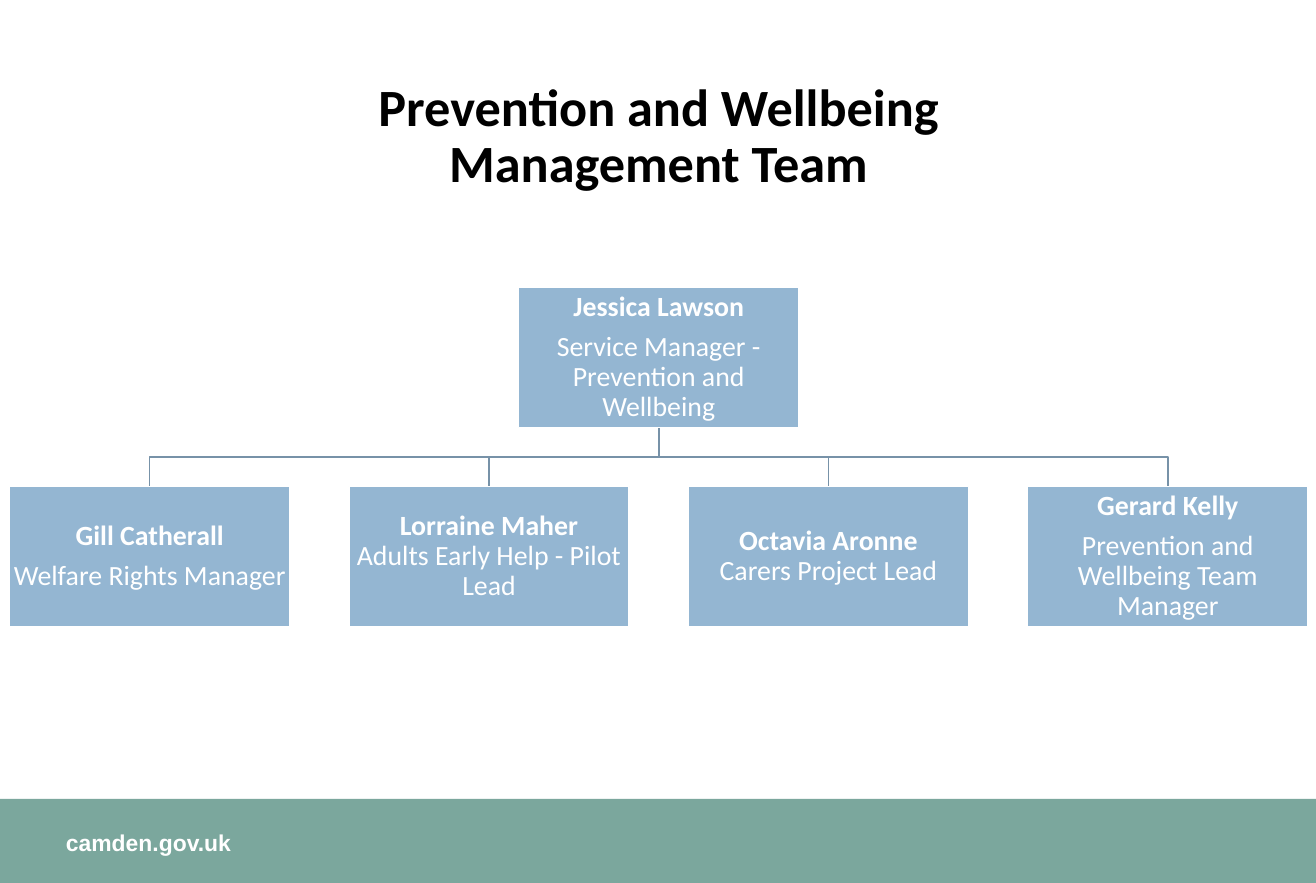
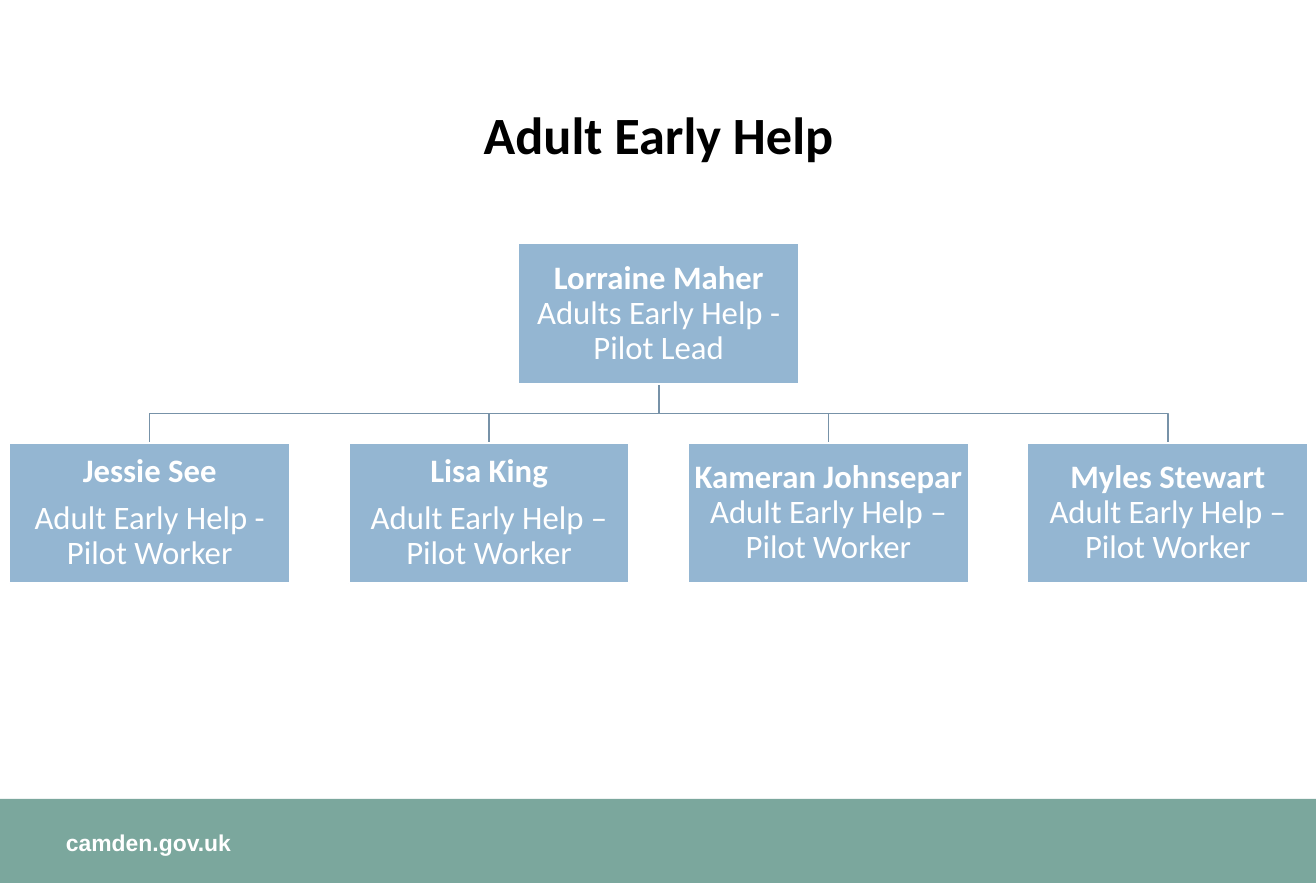
import pptx
import pptx.util
import pptx.dml.color
import pptx.enum.shapes
import pptx.enum.text

Pt = pptx.util.Pt
RGBColor = pptx.dml.color.RGBColor
PP_ALIGN = pptx.enum.text.PP_ALIGN
MIDDLE = pptx.enum.text.MSO_ANCHOR.MIDDLE
RECT = pptx.enum.shapes.MSO_SHAPE.RECTANGLE

WHITE = RGBColor(0xFF, 0xFF, 0xFF)
BLACK = RGBColor(0, 0, 0)
GREEN = RGBColor(0x7B, 0xA7, 0x9D)
BLUE = RGBColor(0x94, 0xB6, 0xD2)
STEEL = RGBColor(0x77, 0x92, 0xA8)

WIDTH, HEIGHT = 805, 540
BAND_TOP = 488.6
BOX_W, BOX_H = 171.6, 85.8
LEFT, PITCH = 5.8, 207.6
DROP = 36

# Each person: name, role, shift of the name to the left, role in its own paragraph
CHARTS = [
    ("Prevention and Wellbeing\vManagement Team", 175.7, 17, 6,
     ("Jessica Lawson", "Service Manager - Prevention and Wellbeing", 0, True),
     [("Gill Catherall", "Welfare Rights Manager", 0, True),
      ("Lorraine Maher", "Adults Early Help - Pilot Lead", 10, False),
      ("Octavia Aronne", "Carers Project Lead", 13.5, False),
      ("Gerard Kelly", "Prevention and Wellbeing Team Manager", 0, True)]),
    ("Adult Early Help", 149, 20, 7,
     ("Lorraine Maher", "Adults Early Help - Pilot Lead", 9.5, False),
     [("Jessie See", "Adult Early Help - Pilot Worker", 2.5, True),
      ("Lisa King", "Adult Early Help – Pilot Worker", 4.5, True),
      ("Kameran Johnsepar", "Adult Early Help – Pilot Worker", 0, False),
      ("Myles Stewart", "Adult Early Help – Pilot Worker", 18.5, False)]),
]


def add_run(p, text, size, color, bold=True, font="Calibri"):
    r = p.add_run()
    r.text = text
    r.font.name = font
    r.font.size = Pt(size)
    r.font.bold = bold
    r.font.color.rgb = color


def add_person(s, person, x, y, size, gap):
    name, role, shift, separate = person
    sp = s.shapes.add_shape(RECT, Pt(x), Pt(y), Pt(BOX_W), Pt(BOX_H))
    sp.shadow.inherit = False
    sp.fill.solid()
    sp.fill.fore_color.rgb = BLUE
    sp.line.color.rgb = WHITE
    sp.line.width = Pt(1)
    tf = sp.text_frame
    tf.word_wrap = True
    tf.vertical_anchor = MIDDLE
    tf.margin_left = tf.margin_right = tf.margin_top = tf.margin_bottom = Pt(0.8)
    p = tf.paragraphs[0]
    if shift:
        # A hanging first line moves centred text by half the indent
        p._p.get_or_add_pPr().set("marL", "0")
        p._p.get_or_add_pPr().set("indent", str(-Pt(2 * shift)))
    add_run(p, name, size, WHITE)
    if separate:
        p.space_after = Pt(gap)
        p = tf.add_paragraph()
    else:
        p.add_line_break()
    add_run(p, role, size, WHITE, bold=False)
    for p in tf.paragraphs:
        p.alignment = PP_ALIGN.CENTER
        p.line_spacing = 0.9


prs = pptx.Presentation()
prs.slide_width, prs.slide_height = Pt(WIDTH), Pt(HEIGHT)
layout = prs.slide_layouts[5]
title = layout.placeholders[0]
title.left, title.top, title.width, title.height = Pt(41), Pt(39), Pt(724), Pt(90)
slides = [prs.slides.add_slide(layout) for chart in CHARTS]

# The band and its address are drawn once and moved to the layout
band = slides[0].shapes.add_shape(RECT, 0, Pt(BAND_TOP), Pt(WIDTH), Pt(HEIGHT - BAND_TOP))
band.shadow.inherit = False
band.fill.solid()
band.fill.fore_color.rgb = GREEN
band.line.fill.background()
address = slides[0].shapes.add_textbox(Pt(40.3), Pt(507), Pt(332), Pt(17))
tf = address.text_frame
tf.word_wrap = True
tf.margin_left = tf.margin_top = tf.margin_bottom = 0
add_run(tf.paragraphs[0], "camden.gov.uk", 14, WHITE, font="Arial")
for sp in (band, address):
    layout.shapes.element.append(sp.element)

centre = LEFT + 1.5 * PITCH + BOX_W / 2
for s, (heading, top, size, gap, lead, team) in zip(slides, CHARTS):
    tf = s.shapes.title.text_frame
    tf.vertical_anchor = MIDDLE
    p = tf.paragraphs[0]
    p.alignment = PP_ALIGN.CENTER
    p.line_spacing = 0.9
    for i, line in enumerate(heading.split("\v")):
        if i:
            p.add_line_break()
        add_run(p, line, 32, BLACK)

    lead_bottom = top + BOX_H
    team_top = lead_bottom + DROP
    middle = lead_bottom + DROP / 2
    for i in range(len(team)):
        x = LEFT + i * PITCH + BOX_W / 2
        fb = s.shapes.build_freeform(Pt(centre), Pt(lead_bottom))
        fb.add_line_segments([(Pt(centre), Pt(middle)), (Pt(x), Pt(middle)),
                              (Pt(x), Pt(team_top))], close=False)
        sp = fb.convert_to_shape()
        sp.shadow.inherit = False
        sp.fill.background()
        sp.line.color.rgb = STEEL
        sp.line.width = Pt(1)

    add_person(s, lead, centre - BOX_W / 2, top, size, gap)
    for i, person in enumerate(team):
        add_person(s, person, LEFT + i * PITCH, team_top, size, gap)

prs.save("out.pptx")
